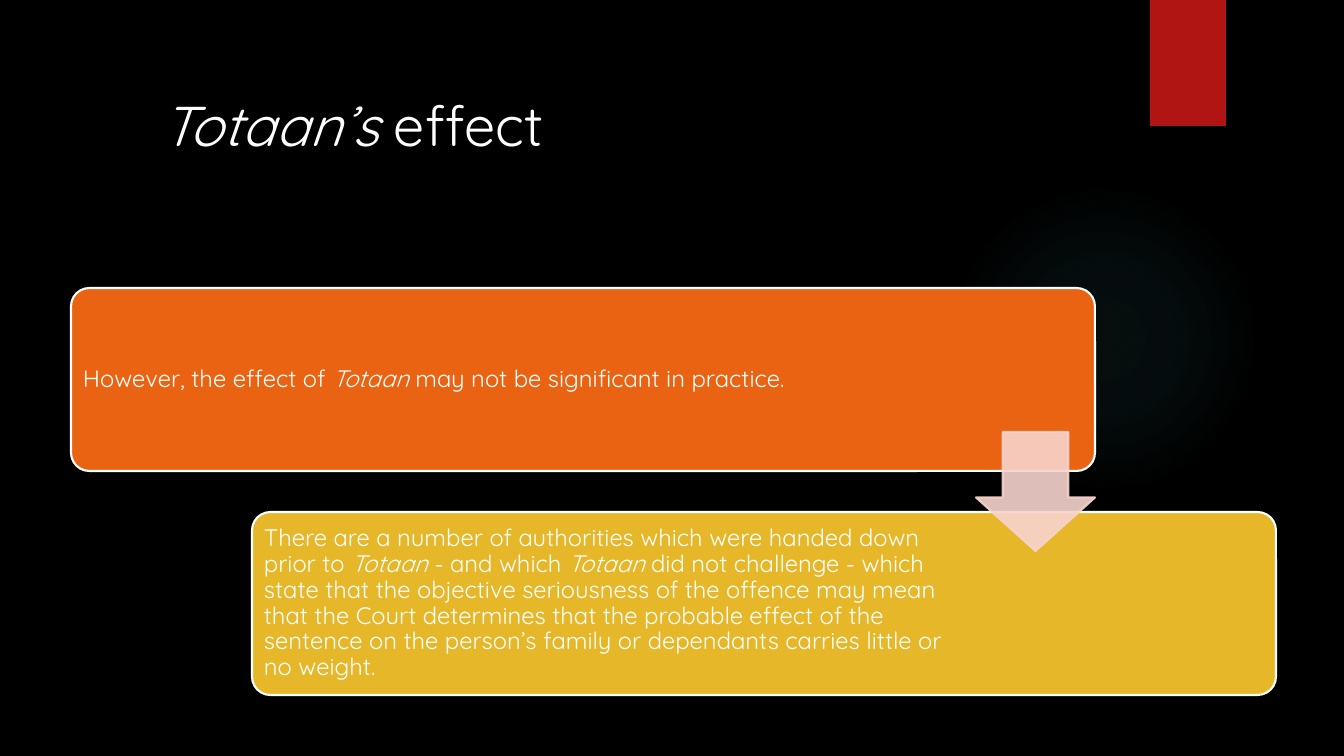
from lxml import etree
from pptx import Presentation
from pptx.dml.color import RGBColor
from pptx.enum.shapes import MSO_SHAPE as Shape
from pptx.enum.text import MSO_ANCHOR as Anchor, PP_ALIGN as Align
from pptx.oxml import parse_xml
from pptx.oxml.ns import nsdecls, qn
from pptx.util import Pt

PX = 914400 / 100.8
BLACK = RGBColor(0x00, 0x00, 0x00)
WHITE = RGBColor(0xFF, 0xFF, 0xFF)
RED = RGBColor(0xB0, 0x15, 0x13)
ORANGE = RGBColor(0xEA, 0x63, 0x12)
GOLD = RGBColor(0xE6, 0xB7, 0x29)
PINK = RGBColor(0xF7, 0xD3, 0xCC)
TEAL = RGBColor(0x50, 0xB9, 0xC1)

deck = Presentation()
deck.slide_width, deck.slide_height = round(1344 * PX), round(756 * PX)
slide = deck.slides.add_slide(deck.slide_layouts[6])
slide.background.fill.solid()
slide.background.fill.fore_color.rgb = BLACK


def add_block(kind, box, fill, line=None):
    block = slide.shapes.add_shape(kind, *[round(v * PX) for v in box])
    block.shadow.inherit = False
    block.fill.solid()
    block.fill.fore_color.rgb = fill
    if line is None:
        block.line.fill.background()
    else:
        block.line.color.rgb = line
        block.line.width = Pt(1.5)
    return block


def add_words(box, size, runs, inset):
    frame = slide.shapes.add_textbox(*[round(v * PX) for v in box]).text_frame
    frame.word_wrap = True
    frame.vertical_anchor = Anchor.MIDDLE
    frame.margin_left = frame.margin_right = round(inset * PX)
    frame.margin_top = frame.margin_bottom = round(7 * PX)
    paragraph = frame.paragraphs[0]
    paragraph.alignment = Align.LEFT
    paragraph.font.name = "Quicksand"
    paragraph.font.size = Pt(size)
    paragraph.font.color.rgb = WHITE
    for words, italic in runs:
        run = paragraph.add_run()
        run.text = words
        run.font.italic = italic
    return paragraph


glow = add_block(Shape.OVAL, (949, 184, 310, 310), TEAL)
stops = "".join(
    f'<a:gs pos="{at * 1000}"><a:srgbClr val="{TEAL}"><a:alpha val="{alpha * 1000}"/></a:srgbClr></a:gs>'
    for at, alpha in ((0, 7), (36, 6), (69, 0))
)
gradient = parse_xml(
    f'<a:gradFill {nsdecls("a")} rotWithShape="1"><a:gsLst>{stops}</a:gsLst><a:path path="circle">'
    '<a:fillToRect l="50000" t="50000" r="50000" b="50000"/></a:path></a:gradFill>'
)
glow_fill = glow.element.spPr.find(qn("a:solidFill"))
glow_fill.getparent().replace(glow_fill, gradient)

add_block(Shape.RECTANGLE, (1150, 0, 76, 126), RED)
add_words((152, 38, 1072, 173), 40, [("Totaan’s", True), (" effect", False)], 10)

steps = [
    (71, 288, 835, ORANGE, [
        ("However, the effect of ", False),
        ("Totaan", True),
        (" may not be significant in practice.", False),
    ]),
    (252, 512, 714, GOLD, [
        ("There are a number of authorities which were handed down prior to ", False),
        ("Totaan", True),
        (" - and which ", False),
        ("Totaan", True),
        (" did not challenge - which state that the objective seriousness of the offence may mean "
         "that the Court determines that the probable effect of the sentence on the person’s family "
         "or dependants carries little or no weight.", False),
    ]),
]
for left, top, text_width, colour, runs in steps:
    card = add_block(Shape.ROUNDED_RECTANGLE, (left, top, 1024, 183), colour, WHITE)
    card.adjustments[0] = 0.1
    argument = add_words((left + 5, top + 5, text_width, 173), 17, runs, 7)
    argument.line_spacing = 0.9

arrow = add_block(Shape.DOWN_ARROW, (976, 432, 119, 119), PINK, PINK)
arrow.adjustments[0] = 0.55
arrow.adjustments[1] = 0.45
for tint in arrow.element.spPr.iter(qn("a:srgbClr")):
    etree.SubElement(tint, qn("a:alpha")).set("val", "90000")

deck.save("out.pptx")
